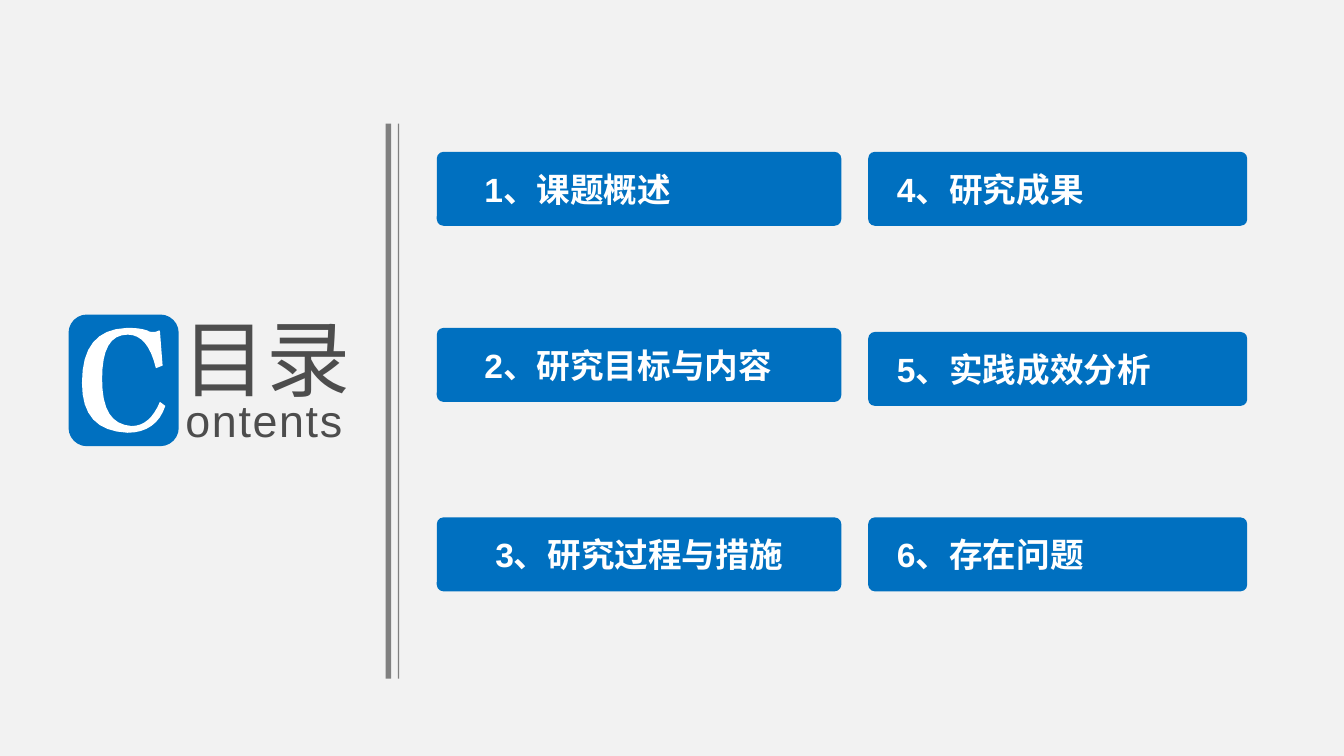
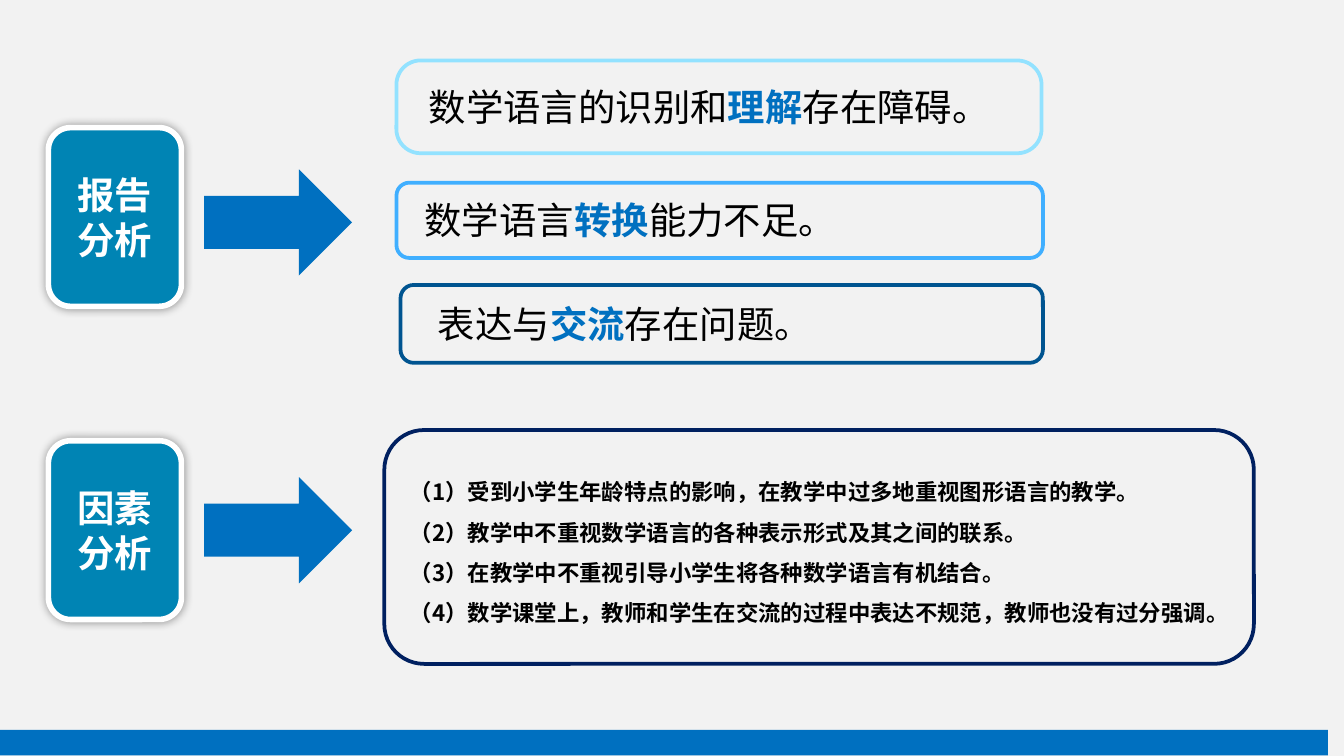
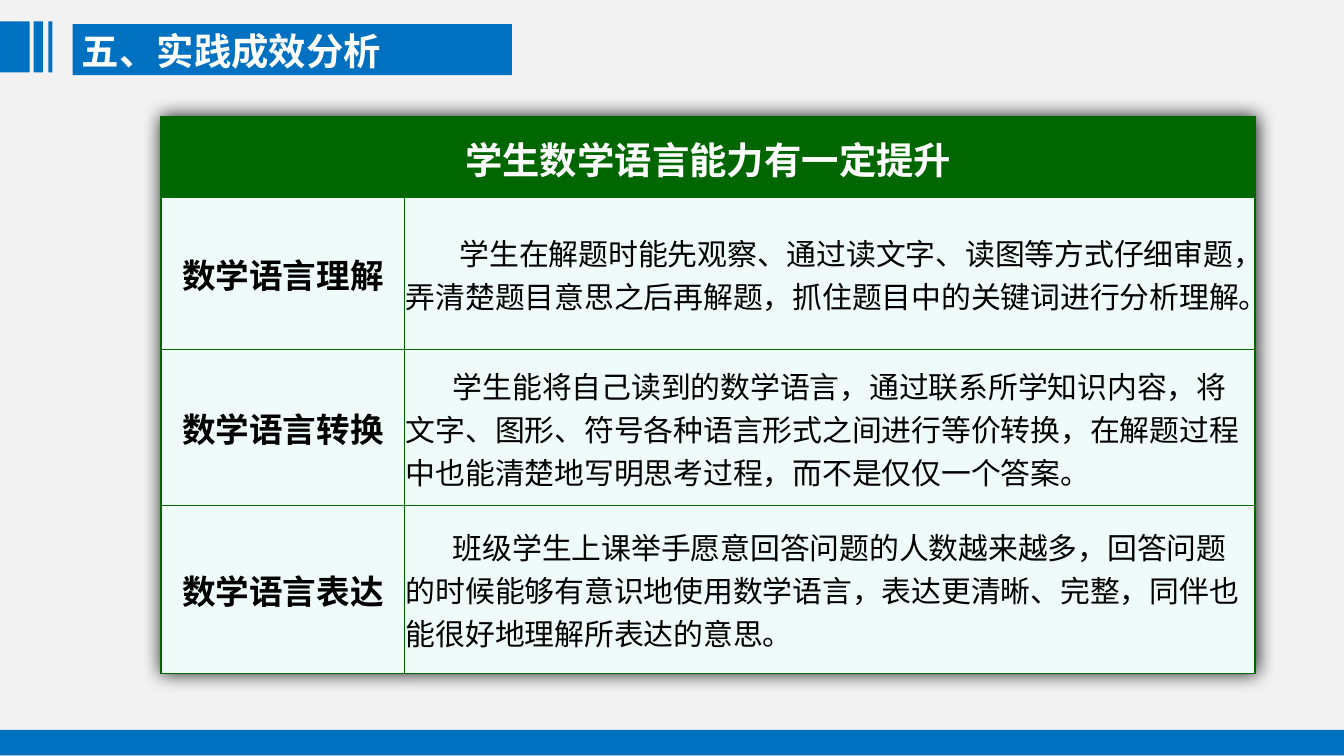
"""Build three slides: contents, report analysis and practice results."""
from lxml.etree import SubElement
from pptx import Presentation
from pptx.dml.color import RGBColor
from pptx.enum.shapes import MSO_SHAPE
from pptx.enum.text import MSO_ANCHOR, PP_ALIGN
from pptx.oxml import parse_xml
from pptx.oxml.ns import nsdecls, qn
from pptx.util import Inches, Pt

BLUE, TEAL, GREEN, MINT = "0070C0", "0084B4", "006600", "EEFBF8"
WHITE, BLACK, DARK, GREY, PAPER = "FFFFFF", "000000", "4D4D4D", "808080", "F2F2F2"
ARIAL, NOTO = "Arial", "Noto Sans CJK SC"
LEFT, MID = PP_ALIGN.LEFT, PP_ALIGN.CENTER
RECT, ROUND, ARROW = MSO_SHAPE.RECTANGLE, MSO_SHAPE.ROUNDED_RECTANGLE, MSO_SHAPE.RIGHT_ARROW

TOPICS = [
    (3.25, 3.01, 0.34, [(1.13, "1、课题概述", LEFT), (2.44, "2、研究目标与内容", LEFT),
                        (3.85, "3、研究过程与措施", MID)]),
    (6.46, 2.82, 0.2, [(1.13, "4、研究成果", LEFT), (2.47, "5、实践成效分析", LEFT),
                       (3.85, "6、存在问题", LEFT)]),
]
LETTER = [
    (1.21, 2.72), (1.19, 2.46), (1.19, 2.46, 1.18, 2.46, 1.18, 2.46),
    (1.16, 2.47, 1.15, 2.47, 1.14, 2.47), (1.13, 2.47, 1.11, 2.47, 1.1, 2.46),
    (1.04, 2.44, 0.99, 2.44, 0.94, 2.44), (0.72, 2.45, 0.61, 2.58, 0.61, 2.85),
    (0.61, 3.09, 0.72, 3.21, 0.95, 3.22), (1.09, 3.22, 1.19, 3.15, 1.23, 3.02),
    (1.19, 2.99), (1.14, 3.11, 1.07, 3.17, 0.98, 3.17),
    (0.83, 3.16, 0.76, 3.05, 0.76, 2.82), (0.76, 2.6, 0.82, 2.49, 0.95, 2.49),
    (1.05, 2.49, 1.12, 2.57, 1.16, 2.74),
]
FRAMES = [
    ((2.95, 0.45, 4.8, 0.69), "93E2FF", 0.26),
    ((2.95, 1.36, 4.81, 0.56), "40AFFF", 0.17),
    ((2.98, 2.12, 4.78, 0.58), "005490", 0.17),
    ((2.86, 3.2, 6.47, 1.74), "002060", 0.17),
]
FINDINGS = [
    ((2.76, 0.58, 5.79, 0.44), 0.43, ("数学语言的识别和", "理解", "存在障碍。")),
    ((2.95, 1.42, 5.36, 0.44), 0.21, ("数学语言", "转换", "能力不足。")),
    ((3.16, 2.19, 6.84, 0.44), 0.1, ("表达与", "交流", "存在问题。")),
]
CAUSES = [
    "（1）受到小学生年龄特点的影响，在教学中过多地重视图形语言的教学。",
    "（2）教学中不重视数学语言的各种表示形式及其之间的联系。",
    "（3）在教学中不重视引导小学生将各种数学语言有机结合。",
    "（4）数学课堂上，教师和学生在交流的过程中表达不规范，教师也没有过分强调。",
]
BADGES = [(0.95, 1.26, "报告分析"), (3.28, 3.55, "因素分析")]
HEAD = "学生数学语言能力有一定提升"
GAINS = [
    ("数学语言理解", 0.4, "学生在解题时能先观察、通过读文字、读图等方式仔细审题，弄清楚题目意思之后再解题，"
     "抓住题目中的关键词进行分析理解。"),
    ("数学语言转换", 0.35, "学生能将自己读到的数学语言，通过联系所学知识内容，将文字、图形、符号各种语言形式之间"
     "进行等价转换，在解题过程中也能清楚地写明思考过程，而不是仅仅一个答案。"),
    ("数学语言表达", 0.35, "班级学生上课举手愿意回答问题的人数越来越多，回答问题的时候能够有意识地使用数学语言，"
     "表达更清晰、完整，同伴也能很好地理解所表达的意思。"),
]
COLS, ROWS = [1.81, 6.33], [0.6, 1.13, 1.16, 1.25]


def color(code):
    """Turn a hex string into a colour."""
    return RGBColor.from_string(code)


def paint(shape, fill=None, line=None, width=2):
    """Set fill and outline, and drop the shadow."""
    shape.shadow.inherit = False
    if fill:
        shape.fill.solid()
        shape.fill.fore_color.rgb = color(fill)
    else:
        shape.fill.background()
    if line:
        shape.line.color.rgb = color(line)
        shape.line.width = Pt(width)
    else:
        shape.line.fill.background()
    return shape


def draw(slide, kind, box, fill=None, line=None, width=2, adj=None):
    """Add a preset shape."""
    shape = slide.shapes.add_shape(kind, *map(Inches, box))
    if adj:
        shape.adjustments[0] = adj
    return paint(shape, fill, line, width)


def style(para, size, font, ink, bold=False, align=LEFT):
    """Format one paragraph."""
    para.alignment = align
    para.font.size, para.font.name, para.font.bold = Pt(size), font, bold
    para.font.color.rgb = color(ink)


def pad(frame, left=0.1, top=0.05, right=0.1, bottom=0.05):
    """Set the margins of a text frame or cell."""
    frame.margin_left, frame.margin_top = Inches(left), Inches(top)
    frame.margin_right, frame.margin_bottom = Inches(right), Inches(bottom)


def fill_text(shape, text, *look, pads=(), anchor=MSO_ANCHOR.MIDDLE):
    """Write one styled paragraph into a shape."""
    frame = shape.text_frame
    frame.word_wrap, frame.vertical_anchor = True, anchor
    pad(frame, *pads)
    frame.text = text
    style(frame.paragraphs[0], *look)
    return frame


def label(slide, box, text, *look, pads=()):
    """Add a text box with one styled paragraph."""
    shape = slide.shapes.add_textbox(*map(Inches, box))
    return fill_text(shape, text, *look, pads=pads, anchor=MSO_ANCHOR.TOP)


def glow(blur, alpha):
    """Make a soft centred shadow."""
    return parse_xml(
        f'<a:effectLst {nsdecls("a")}><a:outerShdw blurRad="{Pt(blur)}" dist="0" '
        f'algn="ctr" rotWithShape="0"><a:srgbClr val="{BLACK}">'
        f'<a:alpha val="{alpha * 1000}"/></a:srgbClr></a:outerShdw></a:effectLst>')


def trace(start, curve, steps=8):
    """Return points along a cubic curve."""
    knots = [start, curve[:2], curve[2:4], curve[4:]]
    points = []
    for step in range(1, steps + 1):
        t = step / steps
        parts = [(1 - t) ** 3, 3 * t * (1 - t) ** 2, 3 * t * t * (1 - t), t ** 3]
        points.append(tuple(sum(w * k[i] for w, k in zip(parts, knots)) for i in (0, 1)))
    return points


def emblem(slide):
    """Draw the contents emblem."""
    draw(slide, ROUND, (0.51, 2.34, 0.82, 0.98), BLUE)
    points = LETTER[:1]
    for item in LETTER[1:]:
        points += [item] if len(item) == 2 else trace(points[-1], item)
    spots = [(Inches(x), Inches(y)) for x, y in points]
    pen = slide.shapes.build_freeform(*spots[0])
    pen.add_line_segments(spots[1:], close=True)
    paint(pen.convert_to_shape(), WHITE)
    flat = (0, 0, 0, 0)
    label(slide, (1.36, 2.28, 1.4, 0.7), "目录", 45, NOTO, DARK, pads=flat)
    word = label(slide, (1.38, 2.92, 1.3, 0.4), "ontents", 24, ARIAL, DARK, pads=flat)
    word.paragraphs[0].runs[0].font._element.set("spc", "90")


def contents(slide):
    """Fill the contents slide."""
    emblem(slide)
    for x, wide in [(2.87, 0.04), (2.96, 0.01)]:
        draw(slide, RECT, (x, 0.92, wide, 4.13), GREY)
    for x, wide, inset, items in TOPICS:
        for y, text, align in items:
            bar = draw(slide, ROUND, (x, y, wide, 0.55), BLUE, adj=0.09)
            edge = 0.07 if align == MID else inset
            fill_text(bar, text, 18, ARIAL, WHITE, True, align,
                      pads=(edge, 0.04, 0.07, 0.04))


def footer(slide, x=0):
    """Draw the bottom band."""
    draw(slide, RECT, (x, 5.43, 10, 0.19), BLUE)


def report(slide):
    """Fill the report analysis slide."""
    footer(slide, -0.12)
    for box, line, adj in FRAMES:
        draw(slide, ROUND, box, line=line, adj=adj)
    for box, inset, (first, key, last) in FINDINGS:
        para = label(slide, box, first, 20, NOTO, BLACK, pads=(inset,)).paragraphs[0]
        mark = para.add_run()
        mark.text = key
        mark.font.bold = True
        mark.font.color.rgb = color(BLUE)
        para.add_run().text = last
    frame = label(slide, (2.95, 3.41, 6.61, 1.31), "\n".join(CAUSES), 12, NOTO, BLACK, True)
    for para in frame.paragraphs:
        style(para, 12, NOTO, BLACK, True)
        para.line_spacing = 1.5
    for top, y, text in BADGES:
        badge = draw(slide, ROUND, (0.36, top, 0.99, 1.33), TEAL, WHITE, 3)
        props = badge._element.spPr
        props.replace(props.find(qn("a:effectLst")), glow(5, 40))
        fill_text(badge, text, 20, NOTO, WHITE, True, MID)
        draw(slide, ARROW, (1.52, y, 1.1, 0.79), BLUE)


def put(cell, text, fill, *look, indent=0):
    """Write and format a table cell with borders."""
    cell.text = text
    cell.vertical_anchor = MSO_ANCHOR.MIDDLE
    pad(cell, 0.01, 0.01, 0.01, 0)
    para = cell.text_frame.paragraphs[0]
    style(para, *look)
    para._p.get_or_add_pPr().set("indent", str(Inches(indent)))
    cell.fill.solid()
    cell.fill.fore_color.rgb = color(fill)
    props = cell._tc.get_or_add_tcPr()
    for spot, side in enumerate("LRTB"):
        line = parse_xml(f'<a:ln{side} {nsdecls("a")} w="{Pt(1)}"/>')
        SubElement(SubElement(line, qn("a:solidFill")), qn("a:srgbClr")).set("val", GREEN)
        props.insert(spot, line)


def results(slide):
    """Fill the practice results slide."""
    for x, wide in [(0, 0.22), (0.25, 0.07), (0.36, 0.03)]:
        draw(slide, RECT, (x, 0.16, wide, 0.38), BLUE)
    footer(slide)
    box = map(Inches, (1.2, 0.87, sum(COLS), sum(ROWS)))
    table = slide.shapes.add_table(len(ROWS), len(COLS), *box).table
    for col, wide in zip(table.columns, COLS):
        col.width = Inches(wide)
    for row, high in zip(table.rows, ROWS):
        row.height = Inches(high)
    table._tbl.tblPr.insert(0, glow(10, 90))
    table.cell(0, 0).merge(table.cell(0, 1))
    for col, text in enumerate([HEAD, ""]):
        put(table.cell(0, col), text, GREEN, 20, ARIAL, WHITE, True, MID)
    for row, (name, indent, text) in enumerate(GAINS, 1):
        put(table.cell(row, 0), name, MINT, 18, ARIAL, BLACK, True, MID)
        put(table.cell(row, 1), text, MINT, 16, ARIAL, BLACK, indent=indent)
    draw(slide, RECT, (0.54, 0.18, 3.27, 0.38), BLUE)
    label(slide, (0.53, 0.17, 3.68, 0.41), "五、实践成效分析", 20, NOTO, WHITE, True,
          pads=(0.08, 0.04, 0.07, 0.04))


def main():
    """Build and save the deck."""
    deck = Presentation()
    deck.slide_width = Inches(10)
    deck.slide_height = deck.slide_width * 9 // 16
    for build in (contents, report, results):
        slide = deck.slides.add_slide(deck.slide_layouts[6])
        slide.background.fill.solid()
        slide.background.fill.fore_color.rgb = color(PAPER)
        build(slide)
    deck.save("out.pptx")


if __name__ == "__main__":
    main()
